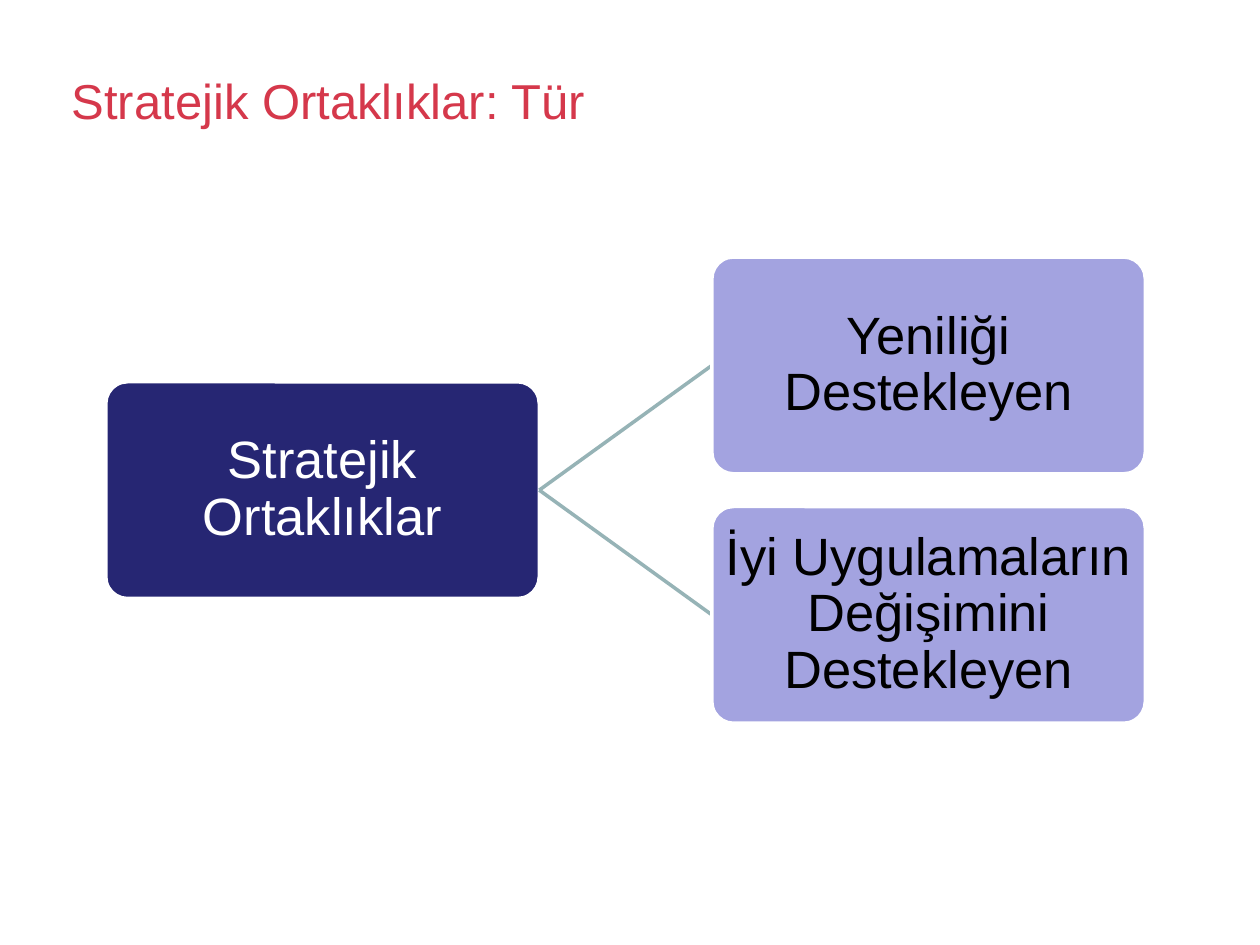
import dataclasses

import pptx
import pptx.dml.color
import pptx.enum.shapes
import pptx.enum.text
import pptx.oxml.ns
import pptx.util
from lxml import etree

Inches = pptx.util.Inches
Pt = pptx.util.Pt
RGB = pptx.dml.color.RGBColor.from_string
ALIGN = pptx.enum.text.PP_ALIGN
ANCHOR = pptx.enum.text.MSO_ANCHOR


@dataclasses.dataclass(frozen=True)
class Theme:
    """Colours, font and type sizes of the slide."""
    font: str = "Arial"
    title_size: int = 28
    box_size: int = 30
    line_width: int = 2
    title: str = "D5384B"
    root: str = "262673"
    branch: str = "A3A3E0"
    link: str = "96B3B6"
    light: str = "FFFFFF"
    dark: str = "000000"


def apply_formats(target, formats):
    """Set each named format value on the target."""
    for name, value in formats.items():
        setattr(target, name, value)


class SlideBuilder:
    """Holds the theme and current slide, and draws each kind of element."""

    def __init__(self, s, theme):
        self.s = s
        self.theme = theme

    def fill_text(self, tf, text, size, color, frame, paragraph):
        """Fill a text frame with one formatted paragraph."""
        apply_formats(tf, {"word_wrap": True,
                           "auto_size": pptx.enum.text.MSO_AUTO_SIZE.NONE, **frame})
        p = tf.paragraphs[0]
        apply_formats(p, paragraph)
        r = p.add_run()
        r.text = text
        apply_formats(r.font, {"name": self.theme.font, "size": Pt(size)})
        r.font.color.rgb = RGB(color)

    def title(self, text, left, top, width, height):
        """Place and format the title placeholder."""
        sp = self.s.shapes.title
        apply_formats(sp, {"left": Inches(left), "top": Inches(top),
                           "width": Inches(width), "height": Inches(height)})
        self.fill_text(sp.text_frame, text, self.theme.title_size, self.theme.title,
                       {"vertical_anchor": ANCHOR.TOP}, {"alignment": ALIGN.LEFT})

    def box(self, text, left, top, width, height, fill, color):
        """Add a rounded box with centred text."""
        sp = self.s.shapes.add_shape(
            pptx.enum.shapes.MSO_SHAPE.ROUNDED_RECTANGLE,
            Inches(left), Inches(top), Inches(width), Inches(height))
        sp.adjustments[0] = 0.1
        sp.shadow.inherit = False
        sp.fill.solid()
        sp.fill.fore_color.rgb = RGB(fill)
        sp.line.color.rgb = RGB(self.theme.light)
        sp.line.width = Pt(self.theme.line_width)
        margins = ("margin_left", "margin_top", "margin_right", "margin_bottom")
        self.fill_text(sp.text_frame, text, self.theme.box_size, color,
                       {"vertical_anchor": ANCHOR.MIDDLE,
                        **dict.fromkeys(margins, Inches(0.02))},
                       {"alignment": ALIGN.CENTER, "line_spacing": 0.9})

    def link(self, x1, y1, x2, y2):
        """Add a straight line between two points."""
        line = self.s.shapes.add_connector(
            pptx.enum.shapes.MSO_CONNECTOR.STRAIGHT,
            Inches(x1), Inches(y1), Inches(x2), Inches(y2))
        line.line.color.rgb = RGB(self.theme.link)
        line.line.width = Pt(self.theme.line_width)
        etree.SubElement(line._element.spPr, pptx.oxml.ns.qn("a:effectLst"))


def main():
    """Build the slide and save it."""
    prs = pptx.Presentation()
    prs.slide_width, prs.slide_height = Inches(10), Inches(7.5)
    theme = Theme()
    slide = SlideBuilder(prs.slides.add_slide(prs.slide_layouts[5]), theme)
    slide.title("Stratejik Ortaklıklar: Tür", 0.47, 0.51, 9, 0.74)

    width, height = 3.44, 1.72
    root_left, branch_left, middle, pitch = 0.84, 5.65, 3.89, 1.98
    branches = ["Yeniliği Destekleyen", "İyi Uygulamaların Değişimini Destekleyen"]

    slide.box("Stratejik Ortaklıklar", root_left, middle - height / 2,
              width, height, theme.root, theme.light)
    for i, text in enumerate(branches):
        center = middle + (i - (len(branches) - 1) / 2) * pitch
        slide.link(root_left + width, middle, branch_left, center)
        slide.box(text, branch_left, center - height / 2,
                  width, height, theme.branch, theme.dark)
    prs.save("out.pptx")


if __name__ == "__main__":
    main()
